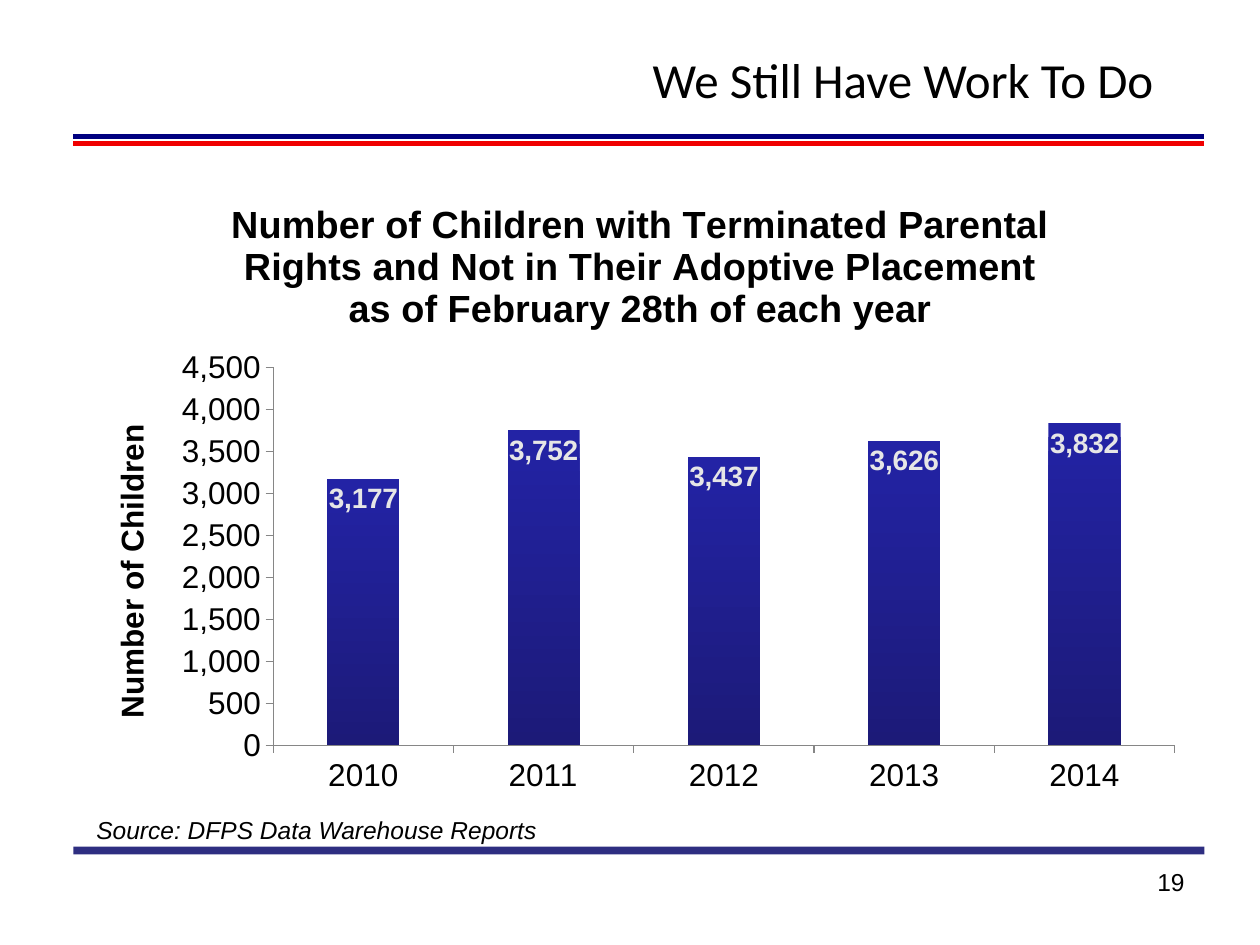
from lxml.etree import SubElement
from pptx import Presentation
from pptx.chart.data import CategoryChartData
from pptx.dml.color import RGBColor
from pptx.enum.chart import XL_CHART_TYPE as Kind, XL_LABEL_POSITION as Pos, XL_TICK_MARK as Tick
from pptx.enum.shapes import MSO_CONNECTOR as Link
from pptx.enum.text import MSO_ANCHOR as Anchor, PP_ALIGN as Align
from pptx.oxml import parse_xml
from pptx.oxml.ns import nsdecls, qn
from pptx.util import Inches, Pt

BLACK = RGBColor(0x00, 0x00, 0x00)
NAVY = RGBColor(0x00, 0x00, 0x80)
RED = RGBColor(0xF0, 0x00, 0x00)
DEEP = RGBColor(0x00, 0x00, 0x66)
GREY = RGBColor(0x86, 0x86, 0x86)
PALE = RGBColor(0xE6, 0xE6, 0xE6)
BAR_TOP = RGBColor(0x23, 0x23, 0xA5)
BAR_END = RGBColor(0x1C, 0x1A, 0x78)

# The grid has twelve cells to the inch: 120 columns by 90 rows.
CELL = Inches(1) / 12


def grid(*cells):
    """Turn counts of grid cells into lengths."""
    return [int(n * CELL) for n in cells]


def style(font, size, face="Arial", color=BLACK, bold=False, italic=False):
    font.name, font.size = face, Pt(size)
    font.bold, font.italic = bold, italic
    font.color.rgb = color


deck = Presentation()
deck.slide_width, deck.slide_height = grid(120, 90)
slide = deck.slides.add_slide(deck.slide_layouts[6])
shapes = slide.shapes

# Rules across the page
for row, color, width, alpha in [
    (13, NAVY, 3, 100),
    (13.7, RED, 3, 100),
    (81, DEEP, 4.5, 82),
]:
    rule = shapes.add_connector(Link.STRAIGHT, *grid(7, row, 114.7, row))
    rule.line.color.rgb = color
    rule.line.width = Pt(width)
    props = rule._element.spPr
    SubElement(props, qn("a:effectLst"))
    if alpha < 100:
        shade = props.find(".//" + qn("a:srgbClr"))
        SubElement(shade, qn("a:alpha")).set("val", str(alpha * 1000))

# Heading, page number and source
for text, place, align, anchor, look in [
    ("We Still Have Work To Do", (30, 1, 81, 13), Align.RIGHT, Anchor.MIDDLE,
     dict(size=28, face="Calibri")),
    ("19", (86, 82, 28, 6.2), Align.RIGHT, Anchor.TOP, dict(size=14)),
    ("Source: DFPS Data Warehouse Reports", (8, 77, 47, 4.1), Align.LEFT,
     Anchor.TOP, dict(size=14, italic=True)),
]:
    frame = shapes.add_textbox(*grid(*place)).text_frame
    frame.word_wrap = True
    frame.vertical_anchor = anchor
    frame.text = text
    para = frame.paragraphs[0]
    para.alignment = align
    style(para.font, **look)

# Column chart
data = CategoryChartData(number_format="#,##0")
data.categories = ["2010", "2011", "2012", "2013", "2014"]
data.add_series("Series 1", [3177, 3752, 3437, 3626, 3832])
chart = shapes.add_chart(Kind.COLUMN_CLUSTERED, *grid(8, 17, 106, 60), data).chart
chart.has_legend = False
style(chart.font, 18)

years, count = chart.category_axis, chart.value_axis
count.has_major_gridlines = False
count.minimum_scale, count.maximum_scale, count.major_unit = 0, 4500, 500
count.tick_labels.number_format = "#,##0"
count.tick_labels.number_format_is_linked = False
for axis in (years, count):
    axis.major_tick_mark = Tick.OUTSIDE
    axis.format.line.color.rgb = GREY

chart.has_title = True
head = chart.chart_title.text_frame
head.text = ("Number of Children with Terminated Parental Rights"
             " and Not in Their Adoptive Placement\n"
             "as of February 28th of each year")
side = count.axis_title.text_frame
side.text = "Number of Children"
for frame, size in [(head, 21.6), (side, 18)]:
    for para in frame.paragraphs:
        style(para.font, size, bold=True)

plot = chart.plots[0]
plot.gap_width = 150
plot.vary_by_categories = False
fill = plot.series[0].format.fill
fill.gradient()
fill.gradient_angle = 270
for stop, color in zip(fill.gradient_stops, (BAR_TOP, BAR_END)):
    stop.color.rgb = color

plot.has_data_labels = True
labels = plot.data_labels
labels.show_value = True
labels.position = Pos.INSIDE_END
labels.number_format = "#,##0"
labels.number_format_is_linked = False
style(labels.font, 16, color=PALE, bold=True)

# Inner plot area, as shares of the chart
area = chart._chartSpace.chart.plotArea
for old in area.findall(qn("c:layout")):
    area.remove(old)
shares = dict(x=0.17, y=0.3, w=0.81, h=0.6)
modes = "".join(f'<c:{k}Mode val="edge"/>' for k in "xy")
sizes = "".join(f'<c:{k} val="{v}"/>' for k, v in shares.items())
area.insert(0, parse_xml(
    f'<c:layout {nsdecls("c")}><c:manualLayout><c:layoutTarget val="inner"/>'
    f"{modes}{sizes}</c:manualLayout></c:layout>"))

deck.save("out.pptx")
